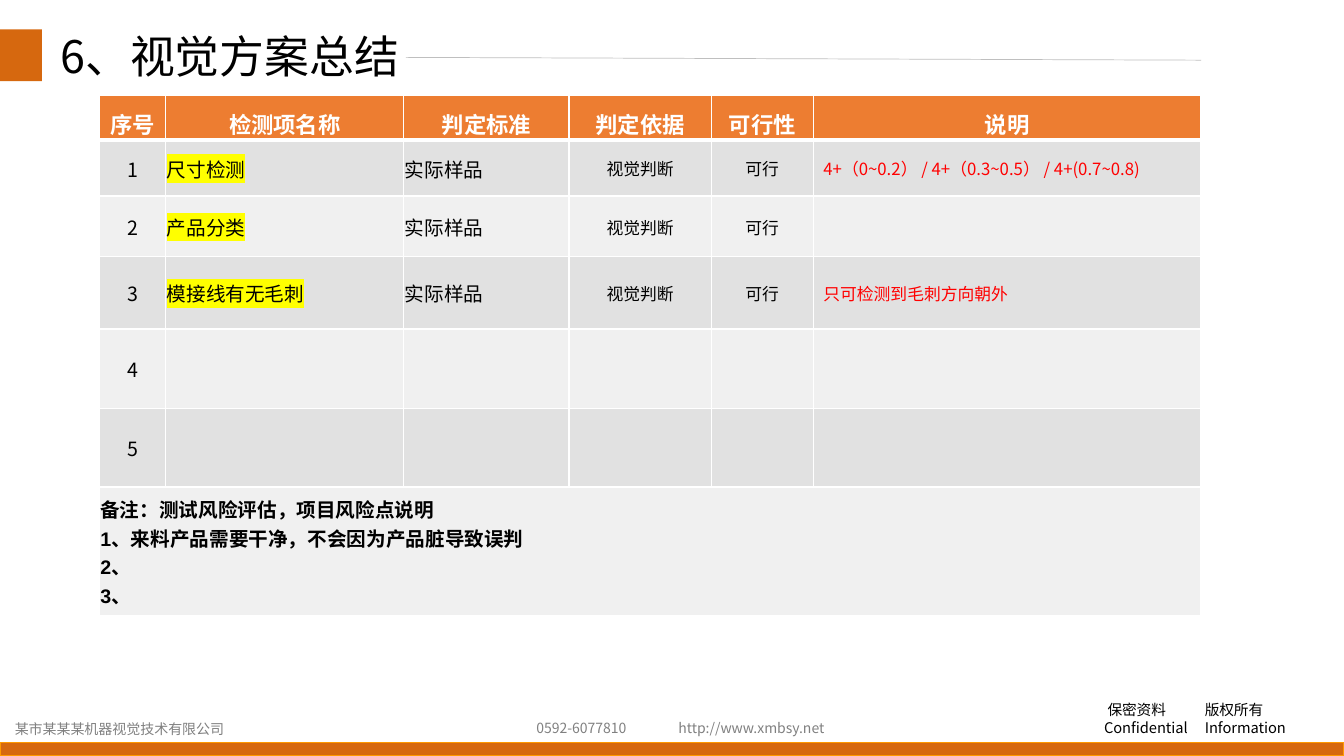
import pptx
import pptx.dml.color
import pptx.enum.shapes
import pptx.enum.text
import pptx.oxml.ns
import pptx.util
import lxml.etree

Pt = pptx.util.Pt
ALIGN = pptx.enum.text.PP_ALIGN
ANCHOR = pptx.enum.text.MSO_ANCHOR
SHAPE = pptx.enum.shapes.MSO_SHAPE
qn = pptx.oxml.ns.qn

SANS = "Noto Sans CJK SC"
COLORS = {
    "black": "000000", "white": "FFFFFF", "red": "FF0000", "gray": "808080",
    "rule": "BFBFBF", "brand": "D6680F", "edge": "FF9900", "header": "ED7D31",
    "odd": "E1E1E1", "even": "F0F0F0", "marker": "FFFF00",
}
HEADINGS = ["序号", "检测项名称", "判定标准", "判定依据", "可行性", "说明"]
CHECKS = [
    ("尺寸检测", "4+（0~0.2） / 4+（0.3~0.5） / 4+(0.7~0.8)"),
    ("产品分类", ""),
    ("模接线有无毛刺", "只可检测到毛刺方向朝外"),
    ("", ""),
    ("", ""),
]
REMARKS = [
    "备注：测试风险评估，项目风险点说明",
    "1、来料产品需要干净，不会因为产品脏导致误判",
    "2、",
    "3、",
]
COLUMN_WIDTHS = [47.5, 170, 118, 101.5, 73, 277]
ROW_HEIGHTS = [32, 40, 43.5, 51.5, 57, 56, 92]


def rgb(name):
    return pptx.dml.color.RGBColor.from_string(COLORS[name])


def add_xml(parent, tag, **attributes):
    return lxml.etree.SubElement(parent, qn(tag), attributes)


def write(paragraph, text, size, color="black", bold=False, font=SANS, marker=False):
    run = paragraph.add_run()
    run.text = text
    run.font.size = Pt(size)
    run.font.bold = bold
    run.font.color.rgb = rgb(color)
    properties = run.font._element
    if marker:
        highlight = add_xml(properties, "a:highlight")
        add_xml(highlight, "a:srgbClr", val=COLORS["marker"])
    run.font.name = font
    add_xml(properties, "a:ea", typeface=SANS)


def add_text_frame(slide, left, top, width, height, wrap=False):
    frame = slide.shapes.add_textbox(Pt(left), Pt(top), Pt(width), Pt(height)).text_frame
    frame.word_wrap = wrap
    return frame


def add_bar(slide, left, top, width, height, edge=None):
    bar = slide.shapes.add_shape(SHAPE.RECTANGLE, Pt(left), Pt(top), Pt(width), Pt(height))
    bar.shadow.inherit = False
    bar.fill.solid()
    bar.fill.fore_color.rgb = rgb("brand")
    if edge:
        bar.line.color.rgb = rgb(edge)
        bar.line.width = Pt(1)
    else:
        bar.line.fill.background()


def add_footer(slide, left, top, width, height):
    bar_height = 9.5
    add_bar(slide, left, top + height - bar_height, width, bar_height, "edge")

    notice = add_text_frame(slide, left + 781.5, top, 156, 32.5, True)
    lines = [("保密资料\t版权所有", 2.5, 58), ("Confidential\tInformation", 0, 64.5)]
    for index, (text, indent, stop) in enumerate(lines):
        paragraph = notice.add_paragraph() if index else notice.paragraphs[0]
        properties = paragraph._p.get_or_add_pPr()
        properties.set("marL", "0")
        properties.set("indent", str(Pt(indent)))
        tabs = add_xml(properties, "a:tabLst")
        add_xml(tabs, "a:tab", pos=str(Pt(stop)), algn="l")
        write(paragraph, text, 10.5)

    contacts = [
        ("http://www.xmbsy.net", 477.5, 13.5, 120),
        ("0592-6077810", 376, 13.5, 79),
        ("某市某某某机器视觉技术有限公司", 3.5, 14, 169),
    ]
    for text, offset, drop, span in contacts:
        contact = add_text_frame(slide, left + offset, top + drop, span, 19.5)
        write(contact.paragraphs[0], text, 10, "gray")


def add_title(slide, left, top, width, height):
    rule = slide.shapes.add_connector(
        pptx.enum.shapes.MSO_CONNECTOR.STRAIGHT,
        Pt(left + 290), Pt(top + 20), Pt(left + width), Pt(top + 22))
    rule.line.color.rgb = rgb("rule")
    rule.line.width = Pt(0.5)
    add_xml(rule._element.spPr, "a:effectLst")
    add_bar(slide, left, top, 30, 37)
    title = add_text_frame(slide, left + 36, top, 287, height, True).paragraphs[0]
    title.line_spacing = 0.9
    write(title, "6、视觉方案总结", 32)


def style_cell(cell, fill, margins, anchor, bottom_border=1):
    cell.margin_left, cell.margin_top, cell.margin_right, cell.margin_bottom = map(Pt, margins)
    cell.vertical_anchor = anchor
    cell.fill.solid()
    cell.fill.fore_color.rgb = rgb(fill)
    properties = cell._tc.get_or_add_tcPr()
    borders = [("a:lnL", 1), ("a:lnR", 1), ("a:lnT", 1), ("a:lnB", bottom_border)]
    for index, (tag, weight) in enumerate(borders):
        border = add_xml(properties, tag, w=str(Pt(weight)))
        add_xml(add_xml(border, "a:solidFill"), "a:srgbClr", val=COLORS["white"])
        properties.insert(index, border)


def add_summary(slide, left, top, width, height):
    table = slide.shapes.add_table(
        len(ROW_HEIGHTS), len(COLUMN_WIDTHS), Pt(left), Pt(top), Pt(width), Pt(height)).table
    table.horz_banding = False
    for column, span in zip(table.columns, COLUMN_WIDTHS):
        column.width = Pt(span)
    for row, span in zip(table.rows, ROW_HEIGHTS):
        row.height = Pt(span)

    for column, heading in enumerate(HEADINGS):
        cell = table.cell(0, column)
        style_cell(cell, "header", (7.2, 2, 7.2, 0), ANCHOR.TOP, 3)
        paragraph = cell.text_frame.paragraphs[0]
        paragraph.alignment = ALIGN.CENTER
        paragraph.line_spacing = 1.3
        write(paragraph, heading, 16, "white", True)

    tight = (0.7, 0.7, 0.7, 0)
    roomy = (7.2, 3.6, 7.2, 3.6)
    for number, (check, note) in enumerate(CHECKS, 1):
        judged = ("实际样品", "视觉判断", "可行") if check else ("", "", "")
        for column, text in enumerate((str(number), check, *judged, note)):
            cell = table.cell(number, column)
            is_note = column == 5
            style_cell(cell, "odd" if number % 2 else "even",
                       roomy if is_note else tight, ANCHOR.MIDDLE)
            paragraph = cell.text_frame.paragraphs[0]
            paragraph.alignment = ALIGN.CENTER if column in (0, 3, 4) else ALIGN.LEFT
            if text:
                write(paragraph, text, 14 if column < 3 else 12,
                      "red" if is_note else "black", marker=column == 1)

    last = len(ROW_HEIGHTS) - 1
    for column in range(len(COLUMN_WIDTHS)):
        style_cell(table.cell(last, column), "even", tight, ANCHOR.MIDDLE)
    remarks = table.cell(last, 0)
    remarks.merge(table.cell(last, len(COLUMN_WIDTHS) - 1))
    for index, text in enumerate(REMARKS):
        frame = remarks.text_frame
        paragraph = frame.add_paragraph() if index else frame.paragraphs[0]
        write(paragraph, text, 14, bold=True, font="Arial")


def main():
    deck = pptx.Presentation()
    deck.slide_width, deck.slide_height = Pt(960), Pt(540)
    slide = deck.slides.add_slide(deck.slide_layouts[6])
    add_footer(slide, 0, 497, 960, 43)
    add_title(slide, 0, 21, 858, 51)
    add_summary(slide, 71, 68, sum(COLUMN_WIDTHS), sum(ROW_HEIGHTS))
    deck.save("out.pptx")


if __name__ == "__main__":
    main()
